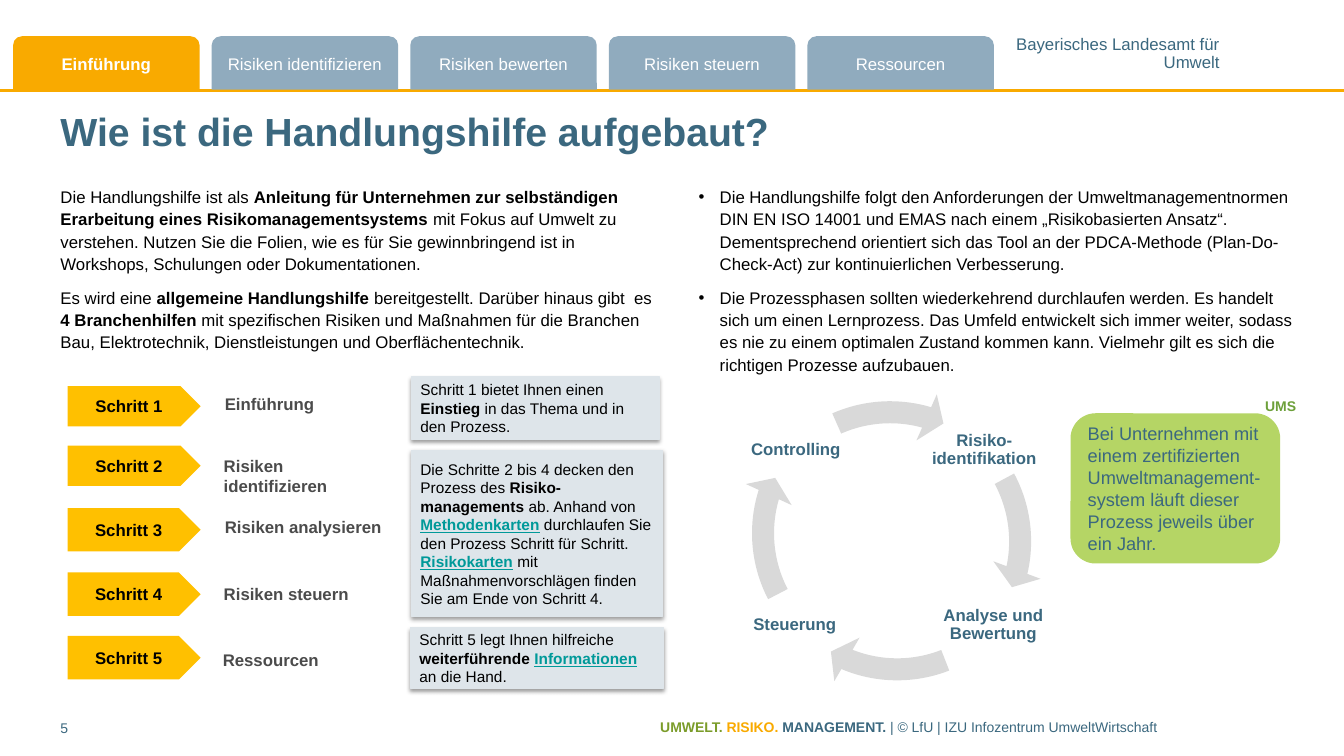
from lxml import etree
from pptx import Presentation
from pptx import util as u
from pptx.dml.color import RGBColor
from pptx.enum import shapes, text
from pptx.oxml.ns import qn

CELL = u.Inches(0.1)
COLS, ROWS = 133.33, 75
MS, AL, AN = shapes.MSO_SHAPE, text.PP_ALIGN, text.MSO_ANCHOR
BLUE, ORANGE, BLACK, PALE = "3B687F", "F9AA00", "000000", "DEE5EA"
FLAT, SNUG, TIGHT = (0, 0.5), (0.9, 0.4), (0.2, 0.2)

TABS = ["Einführung", "Risiken identifizieren", "Risiken bewerten", "Risiken steuern", "Ressourcen"]
INTRO = [
    "Die Handlungshilfe ist als *Anleitung für Unternehmen zur selbständigen Erarbeitung eines "
    "Risikomanagementsystems *mit Fokus auf Umwelt zu verstehen. Nutzen Sie die Folien, wie es für Sie "
    "gewinnbringend ist in Workshops, Schulungen oder Dokumentationen.",
    "Es wird eine *allgemeine Handlungshilfe *bereitgestellt. Darüber hinaus gibt  es *4 Branchenhilfen *"
    "mit spezifischen Risiken und Maßnahmen für die Branchen Bau, Elektrotechnik, Dienstleistungen und "
    "Oberflächentechnik.",
]
METHOD = [
    "Die Handlungshilfe folgt den Anforderungen der Umweltmanagementnormen DIN EN ISO 14001 und EMAS nach "
    "einem „Risikobasierten Ansatz“. Dementsprechend orientiert sich das Tool an der PDCA-Methode "
    "(Plan-Do-Check-Act) zur kontinuierlichen Verbesserung.",
    "Die Prozessphasen sollten wiederkehrend durchlaufen werden. Es handelt sich um einen Lernprozess. "
    "Das Umfeld entwickelt sich immer weiter, sodass es nie zu einem optimalen Zustand kommen kann. "
    "Vielmehr gilt es sich die richtigen Prozesse aufzubauen.",
]
STEPS = [
    ("Einführung", 38.3, 4, 20.4, 38.6),
    ("Risiken identifizieren", 44.2, 4, 20.3, 44.7),
    ("Risiken analysieren", 50.4, 4.3, 20.4, 50.8),
    ("Risiken steuern", 56.8, 4.3, 20.3, 57.4),
    ("Ressourcen", 63.1, 4.3, 20.2, 64),
]
NOTES = [
    ("Schritt 1 bietet Ihnen einen *Einstieg* in das Thema und in den Prozess.", (40.8, 37.4, 24.6, 6.2)),
    ("Die Schritte 2 bis 4 decken den Prozess des *Risiko-managements* ab. Anhand von *_Methodenkarten* "
     "durchlaufen Sie den Prozess Schritt für Schritt. *_Risikokarten* mit Maßnahmenvorschlägen finden "
     "Sie am Ende von Schritt 4.", (40.8, 44.7, 24.9, 16.5)),
    ("Schritt 5 legt Ihnen hilfreiche *weiterführende **_Informationen* an die Hand.", (40.7, 62.3, 25.1, 6)),
]
PHASES = [
    ("Risiko-identifikation", (92.1, 41.9, 11.1, 5.5), (72.5, 38.1), (7.55, 199.05)),
    ("Analyse und Bewertung", (93, 58.3, 11.1, 7.4), (73.4, 37.7), (67.4, 41.19)),
    ("Steuerung", (73.3, 59.1, 11.1, 5.8), (73.2, 37.3), (118.2, 91.53)),
    ("Controlling", (73.4, 41.9, 11.1, 5.5), (72.7, 38.4), (171.64, 147.71)),
]


def rgb(value):
    """Turn a hex string into a colour."""
    return RGBColor.from_string(value)


def grid(*cells):
    """Turn grid columns and rows into lengths."""
    return [round(c * CELL) for c in cells]


def write(p, words, size=12, color=BLACK, bold=False):
    """Add words to a paragraph; *stars* make bold, *_stars* a link look."""
    for i, part in enumerate(words.split("*")):
        if not part:
            continue
        link = part.startswith("_")
        r = p.add_run()
        r.text = part.lstrip("_")
        r.font.name, r.font.size = "Arial", u.Pt(size)
        r.font.bold = bold or i % 2 == 1
        r.font.underline = link
        r.font.color.rgb = rgb("009999" if link else color)


def frame(sp, inset=(1, 0.5), anchor=AN.TOP, wrap=True):
    """Set the margins, anchor and wrapping of a shape's text."""
    tf = sp.text_frame
    tf.word_wrap, tf.vertical_anchor, tf.auto_size = wrap, anchor, text.MSO_AUTO_SIZE.NONE
    tf.margin_left = tf.margin_right = grid(inset[0])[0]
    tf.margin_top = tf.margin_bottom = grid(inset[1])[0]
    return tf


def label(parent, box, words, align=AL.LEFT, spacing=1.0, inset=(1, 0.5), anchor=AN.TOP, **fmt):
    """Add a text box with one paragraph and return the paragraph."""
    p = frame(parent.add_textbox(*grid(*box)), inset, anchor).paragraphs[0]
    p.alignment, p.line_spacing = align, spacing
    write(p, words, **fmt)
    return p


def block(parent, kind, box, fill, words="", align=AL.CENTER, inset=(1, 0.5), anchor=AN.MIDDLE, **fmt):
    """Add a filled preset shape with optional text."""
    sp = parent.add_shape(kind, *grid(*box))
    sp.shadow.inherit = False
    sp.fill.solid()
    sp.fill.fore_color.rgb = rgb(fill)
    sp.line.fill.background()
    if words:
        p = frame(sp, inset, anchor).paragraphs[0]
        p.alignment = align
        write(p, words, **fmt)
    return sp


def body(sp, box, paragraphs, bullet=False):
    """Place a body placeholder and fill it with paragraphs."""
    sp.left, sp.top, sp.width, sp.height = grid(*box)
    tf = frame(sp, FLAT)
    for i, words in enumerate(paragraphs):
        p = tf.add_paragraph() if i else tf.paragraphs[0]
        p.line_spacing, p.space_before = u.Pt(16), u.Pt(8 if i else 0)
        pPr = p._p.get_or_add_pPr()
        indent = grid(2.1)[0] if bullet else 0
        pPr.set("marL", str(indent))
        pPr.set("indent", str(-indent))
        mark = etree.SubElement(pPr, qn("a:buChar" if bullet else "a:buNone"))
        if bullet:
            mark.set("char", "•")
        write(p, words)


def note(parent, words, box):
    """Add a pale note with a soft shadow below it."""
    sp = block(parent, MS.RECTANGLE, box, PALE, words, AL.LEFT, SNUG, size=11)
    sp.line.color.rgb, sp.line.width = rgb(PALE), u.Pt(0.75)
    effects = sp._element.spPr.find(qn("a:effectLst"))
    shadow = etree.SubElement(effects, qn("a:outerShdw"), blurRad=str(u.Pt(3.1)), dist=str(u.Pt(1.6)),
                              dir="5400000", algn="t", rotWithShape="0")
    color = etree.SubElement(shadow, qn("a:srgbClr"), val=BLACK)
    etree.SubElement(color, qn("a:alpha"), val="38000")


def header(parent):
    """Draw the rule, the agency name and the navigation tabs."""
    line = parent.add_connector(shapes.MSO_CONNECTOR.STRAIGHT, *grid(0, 9, COLS, 9))
    line.line.color.rgb, line.line.width = rgb(ORANGE), u.Pt(2)
    etree.SubElement(line._element.spPr, qn("a:effectLst"))
    tf = frame(parent.add_textbox(*grid(100.7, 3.7, 20.3, 3.4)), (0, 0), wrap=False)
    for p, words in ((tf.paragraphs[0], "Bayerisches Landesamt für"), (tf.add_paragraph(), "Umwelt")):
        p.alignment, p.line_spacing = AL.RIGHT, 0.85
        write(p, words, color=BLUE)
    for i, words in enumerate(TABS):
        block(parent, MS.ROUND_2_SAME_RECTANGLE, (1.3 + 19.7 * i, 3.6, 18.5, 5.3),
              "90ABBE" if i else ORANGE, words, inset=(0.4, 0.5), color="FFFFFF", bold=not i)


def steps(parent):
    """Draw the five step arrows with their labels and notes."""
    for i, (words, top, height, left, label_top) in enumerate(STEPS, 1):
        block(parent, MS.PENTAGON, (6.7, top, 13.2, height), "FFC000", f"Schritt {i}", inset=SNUG, bold=True)
        label(parent, (left, label_top, 20, 3.8), words, inset=(1.9, 0.5), color="4B4B4B", bold=True)
    for words, box in NOTES:
        note(parent, words, box)


def cycle(parent):
    """Draw the four phases and the arrows between them."""
    for words, box, corner, (end, start) in PHASES:
        label(parent, box, words, AL.CENTER, 0.9, TIGHT, AN.MIDDLE, color=BLUE, bold=True)
        sp = block(parent, MS.CIRCULAR_ARROW, (*corner, 31.2, 31.2), "D9D9D9")
        for i, value in enumerate((0.07, 4.66, end, start, 0.08)):
            sp.adjustments[i] = value


def ums(parent):
    """Draw the green remark with its UMS mark."""
    block(parent, MS.FLOWCHART_ALTERNATE_PROCESS, (106.2, 41, 20.8, 14.9), "B5D565",
          "Bei Unternehmen mit einem zertifizierten Umweltmanagement-system läuft dieser Prozess "
          "jeweils über ein Jahr.", AL.LEFT, inset=(1, 0.5), size=13, color=BLUE)
    chord = block(parent, MS.CHORD, (125.6, 38.4, 3.4, 3.4), "FFFFFF")
    chord.rotation = 290.1
    chord.adjustments[0], chord.adjustments[1] = 209.67, 165.08
    label(parent, (123.9, 38.9, 6.3, 2.7), "UMS", AL.CENTER, size=10, color="6DA03A", bold=True)


def footer(parent):
    """Write the page number and the coloured imprint."""
    label(parent, (6, 70.9, 7, 3.1), "5", inset=FLAT, size=10, color=BLUE)
    p = label(parent, (65.5, 70.8, 63.6, 3.1), "UMWELT. ", inset=FLAT, size=10, color="7B9C2A", bold=True)
    write(p, "RISIKO. ", size=10, color=ORANGE, bold=True)
    write(p, "MANAGEMENT. ", size=10, color=BLUE, bold=True)
    write(p, "| © LfU | IZU Infozentrum UmweltWirtschaft", size=10, color=BLUE)


def main():
    """Build the slide and save it."""
    prs = Presentation()
    prs.slide_width, prs.slide_height = grid(COLS, ROWS)
    s = prs.slides.add_slide(prs.slide_layouts[3])
    title, left, right = s.placeholders
    title.left, title.top, title.width, title.height = grid(6, 10.2, 123.1, 5.5)
    p = frame(title, FLAT, AN.MIDDLE).paragraphs[0]
    p.alignment = AL.LEFT
    write(p, "Wie ist die Handlungshilfe aufgebaut?", size=28, color=BLUE, bold=True)
    body(left, (6, 17.8, 59.8, 51.4), INTRO)
    body(right, (69.3, 17.8, 59.8, 51.4), METHOD, bullet=True)
    header(s.shapes)
    steps(s.shapes)
    cycle(s.shapes.add_group_shape().shapes)
    ums(s.shapes.add_group_shape().shapes)
    footer(s.shapes)
    prs.save("out.pptx")


if __name__ == "__main__":
    main()
